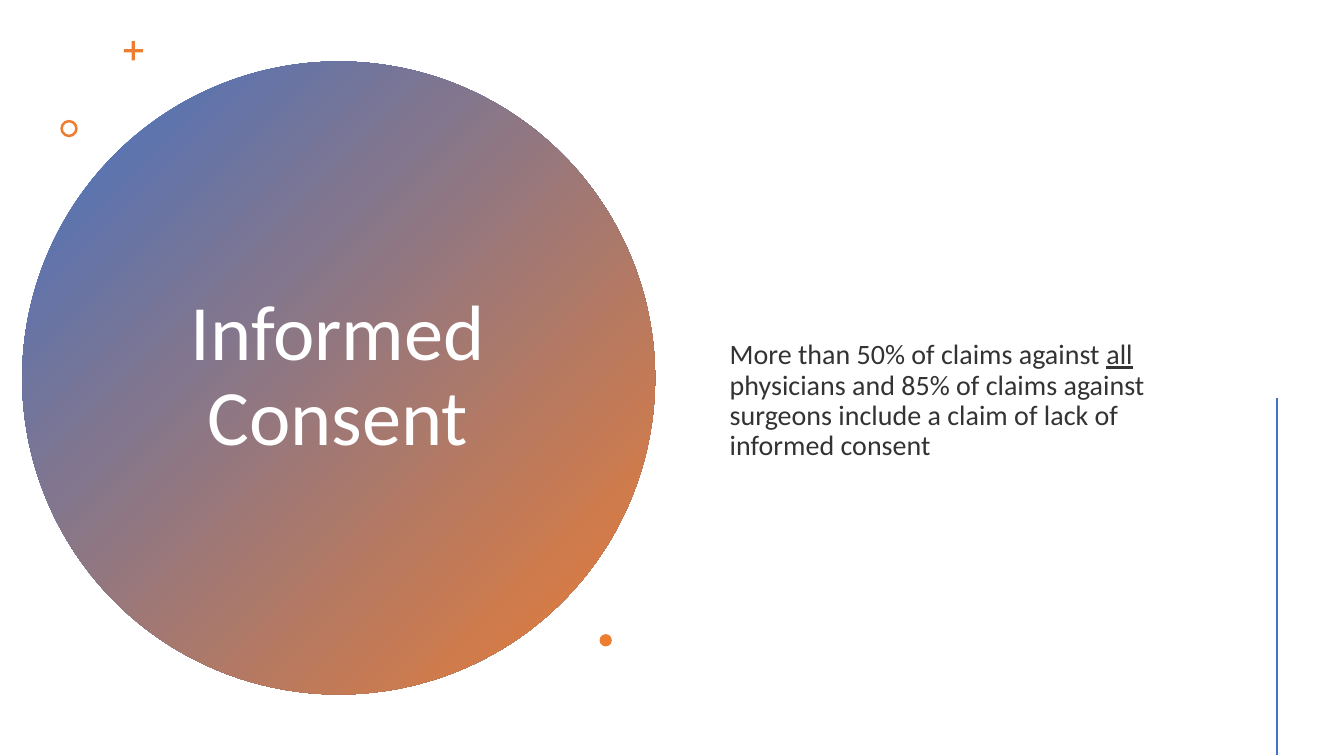
"""Builds the Informed Consent slide."""
from lxml.etree import SubElement
from pptx import Presentation
from pptx.dml.color import RGBColor
from pptx.enum.shapes import MSO_CONNECTOR, MSO_SHAPE
from pptx.enum.text import MSO_ANCHOR, PP_ALIGN
from pptx.oxml.ns import qn
from pptx.util import Cm, Pt

BLUE, ORANGE, WHITE, DARK = "4472C4", "ED7D31", "FFFFFF", "333333"
TITLE = [("Informed Consent", False)]
BODY = [
    ("More than 50% of claims against ", False),
    ("all", True),
    (" physicians and 85% of claims against surgeons include"
     " a claim of lack of informed consent", False),
]
DISC = (0.56, 1.55, 15.95)
MARKS = [
    (MSO_SHAPE.CROSS, 3.12, 1.04, 0.48, 0.42),
    (MSO_SHAPE.DONUT, 1.52, 3.02, 0.44, 0.15),
    (MSO_SHAPE.OVAL, 15.11, 15.98, 0.31, None),
]
TEXTS = [
    (TITLE, (3.45, 3.58, 10.13, 11.86), 56, WHITE, PP_ALIGN.CENTER),
    (BODY, (18.14, 2.01, 12.62, 16.2), 20, DARK, PP_ALIGN.LEFT),
]
RULE = (32.18, 10.03, 32.18, 19.03)


def tint(code):
    return RGBColor.from_string(code)


def add_round(slide, kind, left, top, size):
    shape = slide.shapes.add_shape(kind, Cm(left), Cm(top), Cm(size), Cm(size))
    shape.shadow.inherit = False
    shape.line.fill.background()
    return shape


def add_disc(slide):
    fill = add_round(slide, MSO_SHAPE.OVAL, *DISC).fill
    fill.gradient()
    fill.gradient_angle = 315
    for stop, code, place in zip(fill.gradient_stops, (BLUE, ORANGE), (0, 1)):
        stop.color.rgb = tint(code)
        stop.position = place


def add_mark(slide, kind, left, top, size, adjust):
    mark = add_round(slide, kind, left, top, size)
    mark.fill.solid()
    mark.fill.fore_color.rgb = tint(ORANGE)
    if adjust:
        mark.adjustments[0] = adjust


def add_text(slide, runs, box, size, code, align):
    frame = slide.shapes.add_textbox(*map(Cm, box)).text_frame
    frame.word_wrap = True
    frame.vertical_anchor = MSO_ANCHOR.MIDDLE
    para = frame.paragraphs[0]
    para.alignment = align
    para.line_spacing = 0.9
    para.font.name = "Calibri"
    para.font.size = Pt(size)
    para.font.color.rgb = tint(code)
    for words, under in runs:
        run = para.add_run()
        run.text = words
        if under:
            run.font.underline = True


def add_rule(slide):
    rule = slide.shapes.add_connector(MSO_CONNECTOR.STRAIGHT, *map(Cm, RULE))
    rule.line.color.rgb = tint(BLUE)
    rule.line.width = Pt(2)
    SubElement(rule._element.spPr, qn("a:effectLst"))


def main():
    deck = Presentation()
    deck.slide_width, deck.slide_height = Cm(33.87), Cm(19.05)
    slide = deck.slides.add_slide(deck.slide_layouts[6])
    add_disc(slide)
    for mark in MARKS:
        add_mark(slide, *mark)
    for text in TEXTS:
        add_text(slide, *text)
    add_rule(slide)
    deck.save("out.pptx")


if __name__ == "__main__":
    main()
